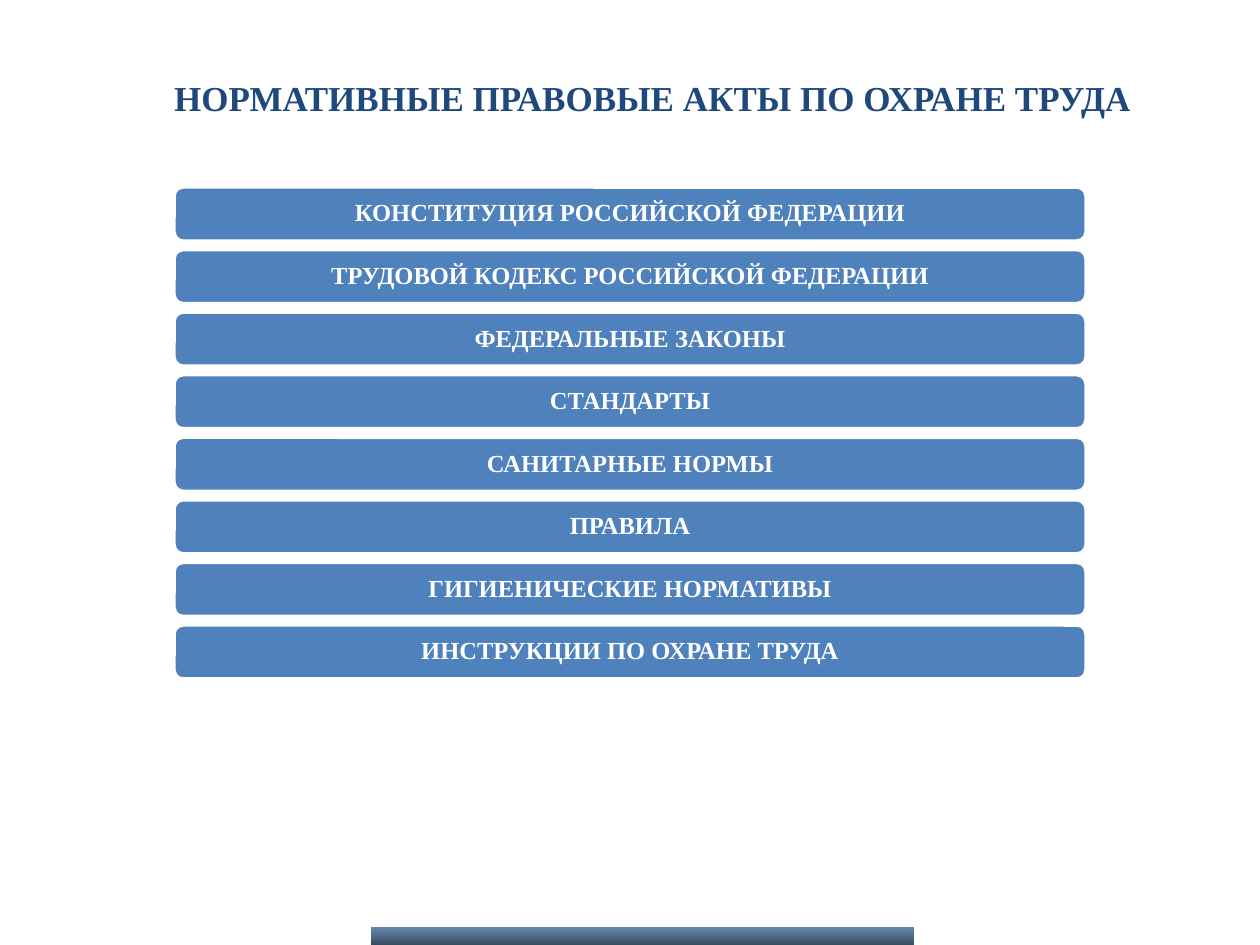
"""Build a slide listing the legal acts on occupational safety."""
import lxml.etree
import pptx
import pptx.dml.color
import pptx.enum.shapes
import pptx.enum.text
import pptx.oxml.ns
import pptx.util

PX = 914400 / 126
COLORS = {"bar": "4F81BD", "white": "FFFFFF", "title": "1F497D",
          "strip_top": "003C73", "strip_bottom": "001C35"}
ACTS = [
    "КОНСТИТУЦИЯ РОССИЙСКОЙ ФЕДЕРАЦИИ",
    "ТРУДОВОЙ КОДЕКС РОССИЙСКОЙ ФЕДЕРАЦИИ",
    "ФЕДЕРАЛЬНЫЕ ЗАКОНЫ",
    "СТАНДАРТЫ",
    "САНИТАРНЫЕ НОРМЫ",
    "ПРАВИЛА",
    "ГИГИЕНИЧЕСКИЕ НОРМАТИВЫ",
    "ИНСТРУКЦИИ ПО ОХРАНЕ ТРУДА",
]
BAR_TOP, BAR_SPAN = 187, 438


def color(name):
    return pptx.dml.color.RGBColor.from_string(COLORS[name])


def write(shape, text, size, color_name, line_spacing):
    frame = shape.text_frame
    frame.word_wrap = True
    frame.vertical_anchor = pptx.enum.text.MSO_ANCHOR.MIDDLE
    paragraph = frame.paragraphs[0]
    paragraph.text = text
    paragraph.alignment = pptx.enum.text.PP_ALIGN.CENTER
    paragraph.line_spacing = line_spacing
    font_format = {"name": "Times New Roman", "size": pptx.util.Pt(size), "bold": True}
    for run in paragraph.runs:
        for attribute, value in font_format.items():
            setattr(run.font, attribute, value)
        run.font.color.rgb = color(color_name)


presentation = pptx.Presentation()
presentation.slide_width = round(1260 * PX)
presentation.slide_height = round(945 * PX)
slide = presentation.slides.add_slide(presentation.slide_layouts[6])
shapes = slide.shapes
kinds = pptx.enum.shapes.MSO_SHAPE

strip_box = [round(length * PX) for length in (372, 928, 542, 17)]
strip = shapes.add_shape(kinds.RECTANGLE, *strip_box)
strip.shadow.inherit = False
strip.line.fill.background()
strip.fill.gradient()
strip.fill.gradient_angle = 270
for stop, name in zip(strip.fill.gradient_stops, ("strip_top", "strip_bottom")):
    stop.color.rgb = color(name)
stop_colors = strip._element.iter(pptx.oxml.ns.qn("a:srgbClr"))
for stop_color, opacity in zip(stop_colors, (60, 80)):
    alpha = lxml.etree.SubElement(stop_color, pptx.oxml.ns.qn("a:alpha"))
    alpha.set("val", str(opacity * 1000))

for index, act in enumerate(ACTS):
    top = BAR_TOP + BAR_SPAN * index / (len(ACTS) - 1)
    bar_box = [round(length * PX) for length in (174, top, 912, 54)]
    bar = shapes.add_shape(kinds.ROUNDED_RECTANGLE, *bar_box)
    bar.shadow.inherit = False
    bar.fill.solid()
    bar.fill.fore_color.rgb = color("bar")
    bar.line.color.rgb = color("white")
    bar.line.width = pptx.util.Pt(2)
    for side in ("left", "top", "right", "bottom"):
        setattr(bar.text_frame, f"margin_{side}", round(8 * PX))
    write(bar, act, 14, "white", 0.9)

title_box = [round(length * PX) for length in (107, 37, 1091, 120)]
title = shapes.add_textbox(*title_box)
write(title, "НОРМАТИВНЫЕ ПРАВОВЫЕ АКТЫ ПО ОХРАНЕ ТРУДА", 20, "title", 1.0)

presentation.save("out.pptx")
